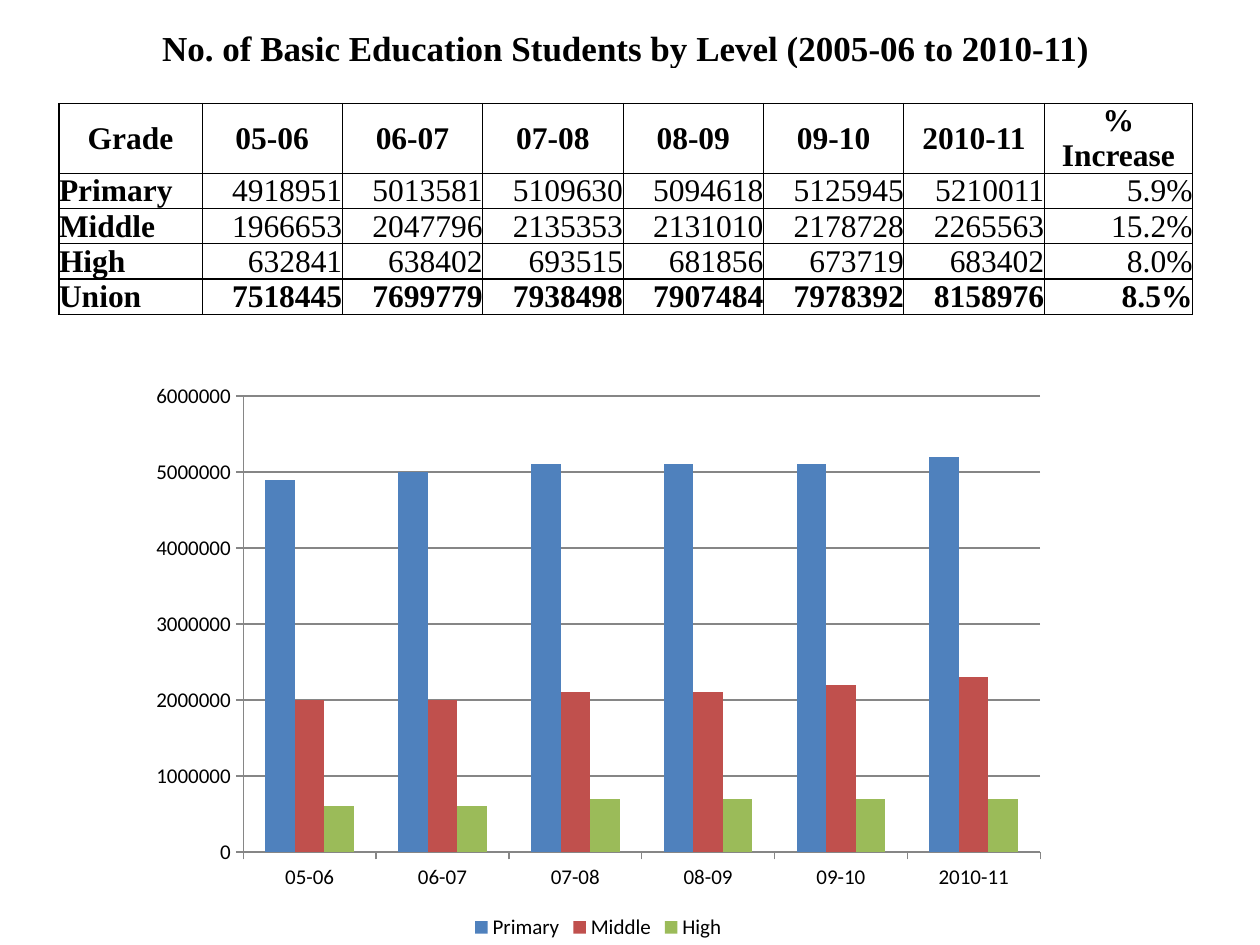
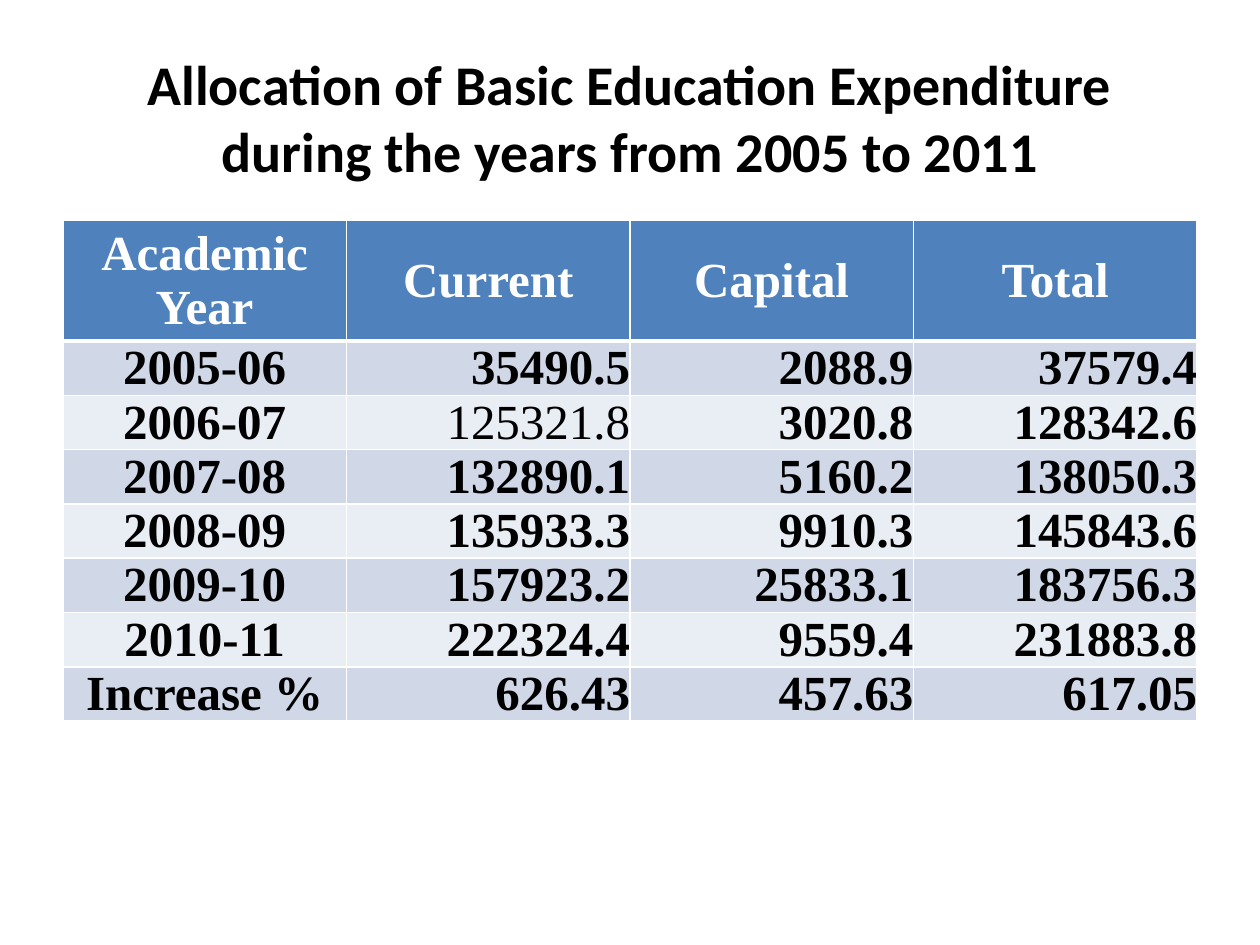
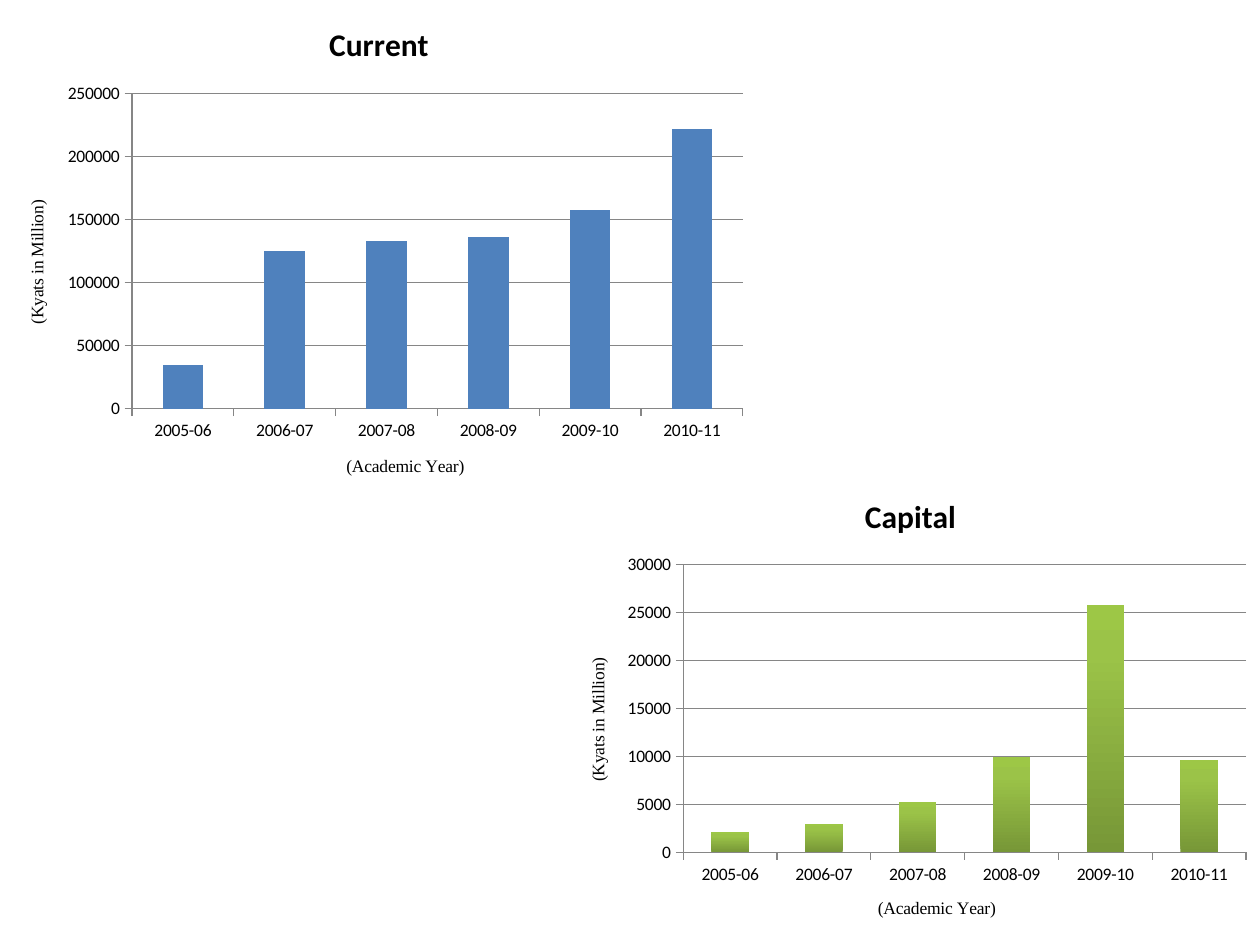
"""Build three slides on basic education enrolment and expenditure."""
from dataclasses import dataclass, field

from lxml import etree
from pptx import Presentation
from pptx.chart.chart import Chart
from pptx.chart.data import CategoryChartData
from pptx.dml.color import RGBColor
from pptx.enum.chart import XL_CHART_TYPE, XL_LEGEND_POSITION, XL_TICK_MARK
from pptx.enum.text import MSO_ANCHOR, PP_ALIGN
from pptx.oxml.ns import qn
from pptx.slide import Slide
from pptx.table import Table
from pptx.text.text import TextFrame
from pptx.util import Cm, Pt

COLUMNS = XL_CHART_TYPE.COLUMN_CLUSTERED
LEGEND_BOTTOM = XL_LEGEND_POSITION.BOTTOM
TICK_OUT = XL_TICK_MARK.OUTSIDE
TOP, MIDDLE, BOTTOM = MSO_ANCHOR.TOP, MSO_ANCHOR.MIDDLE, MSO_ANCHOR.BOTTOM
LEFT, CENTER, RIGHT = PP_ALIGN.LEFT, PP_ALIGN.CENTER, PP_ALIGN.RIGHT
TITLE_ONLY, BLANK = 5, 6

SANS, SERIF = "Calibri", "Times New Roman"
COLORS = {
    "black": "000000", "white": "FFFFFF", "axis": "868686",
    "blue": "4F81BD", "red": "C0504D", "green": "9BBB59",
    "band": "D0D8E8", "pale": "E9EDF4",
}
GREEN_FADE = [(0, "779737"), (80, "9BC348"), (100, "9DC746")]

ENROLMENT_TITLE = "No. of Basic Education Students by Level (2005-06 to 2010-11)"
ENROLMENT = [
    ["Grade", "05-06", "06-07", "07-08", "08-09", "09-10", "2010-11", "%\nIncrease"],
    ["Primary", "4918951", "5013581", "5109630", "5094618", "5125945", "5210011", "5.9%"],
    ["Middle", "1966653", "2047796", "2135353", "2131010", "2178728", "2265563", "15.2%"],
    ["High", "632841", "638402", "693515", "681856", "673719", "683402", "8.0%"],
    ["Union", "7518445", "7699779", "7938498", "7907484", "7978392", "8158976", "8.5%"],
]
SPENDING_TITLE = "Allocation of Basic Education Expenditure during the years from 2005 to 2011"
SPENDING = [
    ["Academic Year", "Current", "Capital", "Total"],
    ["2005-06", "35490.5", "2088.9", "37579.4"],
    ["2006-07", "125321.8", "3020.8", "128342.6"],
    ["2007-08", "132890.1", "5160.2", "138050.3"],
    ["2008-09", "135933.3", "9910.3", "145843.6"],
    ["2009-10", "157923.2", "25833.1", "183756.3"],
    ["2010-11", "222324.4", "9559.4", "231883.8"],
    ["Increase %", "626.43", "457.63", "617.05"],
]


@dataclass
class Grid:
    """A table with its place in centimetres, its text style and its rules."""
    left: float
    top: float
    widths: list[float]
    heights: list[float]
    rows: list[list[str]]
    size: int
    head: int
    label_align: PP_ALIGN
    body_anchor: MSO_ANCHOR
    plain: set[tuple[int, int]]
    rule_color: str
    rule: float
    row_rules: dict[int, float] = field(default_factory=dict)
    column_rules: dict[int, float] = field(default_factory=dict)
    head_color: str = "black"
    head_fill: str | None = None
    bands: list[str] = field(default_factory=list)


@dataclass
class Columns:
    """A clustered column chart with its place in centimetres."""
    box: tuple[float, float, float, float]
    categories: list[str]
    series: dict[str, list[int]]
    fills: list[str | list[tuple[int, str]]]
    size: int
    top_value: int
    step: int
    title: str = ""
    axis_titles: tuple[str, ...] = ()


def rgb(name: str) -> RGBColor:
    """Return the palette colour of that name."""
    return RGBColor.from_string(COLORS[name])


def rounded(figures: list[str], unit: int) -> list[int]:
    """Return the figures rounded to the nearest unit."""
    return [round(float(figure) / unit) * unit for figure in figures]


def write(frame: TextFrame, content: str, *, size: float, bold: bool = False,
          font: str = SERIF, color: str = "black", align: PP_ALIGN = CENTER) -> None:
    """Put formatted text in the first paragraph of a frame."""
    paragraph = frame.paragraphs[0]
    paragraph.text = content
    paragraph.alignment = align
    for run in paragraph.runs:
        run.font.name = font
        run.font.size = Pt(size)
        run.font.bold = bold
        run.font.color.rgb = rgb(color)


def draw_rule(cell, side: str, weight: float, color: str) -> None:
    """Add one border line to a table cell."""
    line = etree.SubElement(cell._tc.get_or_add_tcPr(), qn(f"a:ln{side}"), w=str(Pt(weight)))
    solid = etree.SubElement(line, qn("a:solidFill"))
    etree.SubElement(solid, qn("a:srgbClr"), val=COLORS[color])


def draw_cell(cell, grid: Grid, row: int, column: int) -> None:
    """Draw the text, rules and fill of one table cell."""
    cell.margin_left = cell.margin_right = cell.margin_top = cell.margin_bottom = 0
    edges = {"L": (grid.column_rules, column), "R": (grid.column_rules, column + 1),
             "T": (grid.row_rules, row), "B": (grid.row_rules, row + 1)}
    for side, (rules, edge) in edges.items():
        if row >= grid.head or (side == "B" and edge == grid.head):
            draw_rule(cell, side, rules.get(edge, grid.rule), grid.rule_color)

    is_head = row == grid.head
    fill = grid.head_fill if is_head else None
    if grid.bands and row > grid.head:
        fill = grid.bands[(row - grid.head - 1) % len(grid.bands)]
    if fill:
        cell.fill.solid()
        cell.fill.fore_color.rgb = rgb(fill)
    else:
        cell.fill.background()

    content = grid.rows[row][column]
    if not content:
        etree.SubElement(cell.text_frame.paragraphs[0]._p, qn("a:endParaRPr"), sz="1200")
        return
    cell.vertical_anchor = MIDDLE if is_head else grid.body_anchor
    body_align = RIGHT if column else grid.label_align
    write(cell.text_frame, content, size=grid.size, bold=(row, column) not in grid.plain,
          color=grid.head_color if is_head else "black",
          align=CENTER if is_head else body_align)


def draw_grid(slide: Slide, grid: Grid) -> Table:
    """Add a table to a slide."""
    table = slide.shapes.add_table(
        len(grid.heights), len(grid.widths), Cm(grid.left), Cm(grid.top),
        Cm(sum(grid.widths)), Cm(sum(grid.heights))).table
    table.first_row = table.horz_banding = False
    for column, width in zip(table.columns, grid.widths):
        column.width = Cm(width)
    for row, height in zip(table.rows, grid.heights):
        row.height = Cm(height)
    for row in range(len(grid.heights)):
        for column in range(len(grid.widths)):
            draw_cell(table.cell(row, column), grid, row, column)
    return table


def fill_series(series, fill: str | list[tuple[int, str]]) -> None:
    """Fill the columns of a series with a colour or a vertical fade."""
    series.invert_if_negative = False
    paint = series.format.fill
    if isinstance(fill, str):
        paint.solid()
        paint.fore_color.rgb = rgb(fill)
        return
    paint.gradient()
    paint.gradient_angle = 90
    stops = series._element.find(".//" + qn("a:gsLst"))
    for stop in list(stops):
        stops.remove(stop)
    for percent, value in fill:
        stop = etree.SubElement(stops, qn("a:gs"), pos=str(percent * 1000))
        etree.SubElement(stop, qn("a:srgbClr"), val=value)


def format_axes(chart: Chart, columns: Columns) -> None:
    """Set the scale, lines and titles of both axes."""
    values = chart.value_axis
    values.minimum_scale = 0
    values.maximum_scale = columns.top_value
    values.major_unit = columns.step
    values.has_major_gridlines = True
    axes = (chart.category_axis, values)
    for line in (*(axis.format.line for axis in axes), values.major_gridlines.format.line):
        line.color.rgb = rgb("axis")
        line.width = Pt(0.75)
    for axis in axes:
        axis.major_tick_mark = TICK_OUT
    for axis, title in zip(axes, columns.axis_titles):
        write(axis.axis_title.text_frame, title, size=columns.size)
    if columns.axis_titles:
        body = values.axis_title._element.find(".//" + qn("a:bodyPr"))
        body.set("rot", "-5400000")
        body.set("vert", "horz")


def draw_columns(slide: Slide, columns: Columns) -> None:
    """Add a clustered column chart to a slide."""
    data = CategoryChartData()
    data.categories = columns.categories
    for name, values in columns.series.items():
        data.add_series(name, values)
    chart = slide.shapes.add_chart(COLUMNS, *map(Cm, columns.box), data).chart
    chart.font.name = SANS
    chart.font.size = Pt(columns.size)
    chart.font.color.rgb = rgb("black")
    chart.has_title = bool(columns.title)
    if columns.title:
        write(chart.chart_title.text_frame, columns.title, size=18, bold=True, font=SANS)
    chart.has_legend = len(columns.series) > 1
    if chart.has_legend:
        chart.legend.position = LEGEND_BOTTOM
        chart.legend.include_in_layout = False
    plot = chart.plots[0]
    plot.gap_width = 150
    plot.overlap = 0
    plot.vary_by_categories = False
    for series, fill in zip(plot.series, columns.fills):
        fill_series(series, fill)
    format_axes(chart, columns)


def build_enrolment(slide: Slide) -> None:
    """Build the table and chart of students by level."""
    years = ENROLMENT[0][1:-1]
    levels = ENROLMENT[1:-1]
    width = len(ENROLMENT[0])
    table = draw_grid(slide, Grid(
        left=1.19, top=0.59, widths=[2.88] + [2.83] * len(years) + [2.99],
        heights=[0.8, 0.7, 1.4] + [0.71] * 4, rows=[[""] * width] * 2 + ENROLMENT,
        size=18, head=2, label_align=LEFT, body_anchor=BOTTOM,
        plain={(row, column) for row in (3, 4, 5) for column in range(1, width)},
        rule_color="black", rule=0.5, row_rules=dict.fromkeys((2, 3, 6, 7), 1),
        column_rules={0: 1, width: 1}))
    heading = table.cell(0, 0)
    heading.merge(table.cell(0, width - 1))
    heading.vertical_anchor = BOTTOM
    write(heading.text_frame, ENROLMENT_TITLE, size=20, bold=True)
    draw_columns(slide, Columns(
        box=(2.78, 7.5, 18.56, 11.55), categories=years,
        series={level[0]: rounded(level[1:-1], 100000) for level in levels},
        fills=["blue", "red", "green"], size=12, top_value=6000000, step=1000000))


def build_spending(slide: Slide) -> None:
    """Build the table of yearly expenditure."""
    title = slide.shapes.title
    title.left, title.top, title.width, title.height = map(Cm, (1.27, 0.76, 22.86, 3.18))
    title.text_frame.vertical_anchor = MIDDLE
    write(title.text_frame, SPENDING_TITLE, size=32, bold=True, font=SANS)
    table = draw_grid(slide, Grid(
        left=1.27, top=4.45, widths=[5.71, 5.72] * 2, heights=[2.39] + [1.09] * 7,
        rows=SPENDING, size=28, head=0, label_align=CENTER, body_anchor=MIDDLE,
        plain={(2, 1)}, rule_color="white", rule=1, row_rules={1: 3},
        head_color="white", head_fill="blue", bands=["band", "pale"]))
    corner = table.cell(0, 0)
    corner.vertical_anchor = TOP
    corner.margin_left = corner.margin_right = Cm(0.25)
    corner.margin_top = corner.margin_bottom = Cm(0.12)


def build_spending_charts(slide: Slide) -> None:
    """Build one chart for each kind of expenditure."""
    years = SPENDING[1:-1]
    kinds = [
        (1, (0, 0, 15.28, 10.12), "blue", 250000, 50000, 1000),
        (2, (11.31, 9.52, 14.09, 9.53), GREEN_FADE, 30000, 5000, 100),
    ]
    for column, box, fill, top_value, step, unit in kinds:
        name = SPENDING[0][column]
        draw_columns(slide, Columns(
            box=box, categories=[year[0] for year in years],
            series={name: rounded([year[column] for year in years], unit)},
            fills=[fill], size=10, top_value=top_value, step=step, title=name,
            axis_titles=("(Academic Year)", "(Kyats in Million)")))


def main() -> None:
    """Build and save the presentation."""
    deck = Presentation()
    deck.slide_width, deck.slide_height = Cm(25.4), Cm(19.05)
    pages = [(BLANK, build_enrolment), (TITLE_ONLY, build_spending),
             (BLANK, build_spending_charts)]
    for layout, build in pages:
        build(deck.slides.add_slide(deck.slide_layouts[layout]))
    deck.save("out.pptx")


if __name__ == "__main__":
    main()
